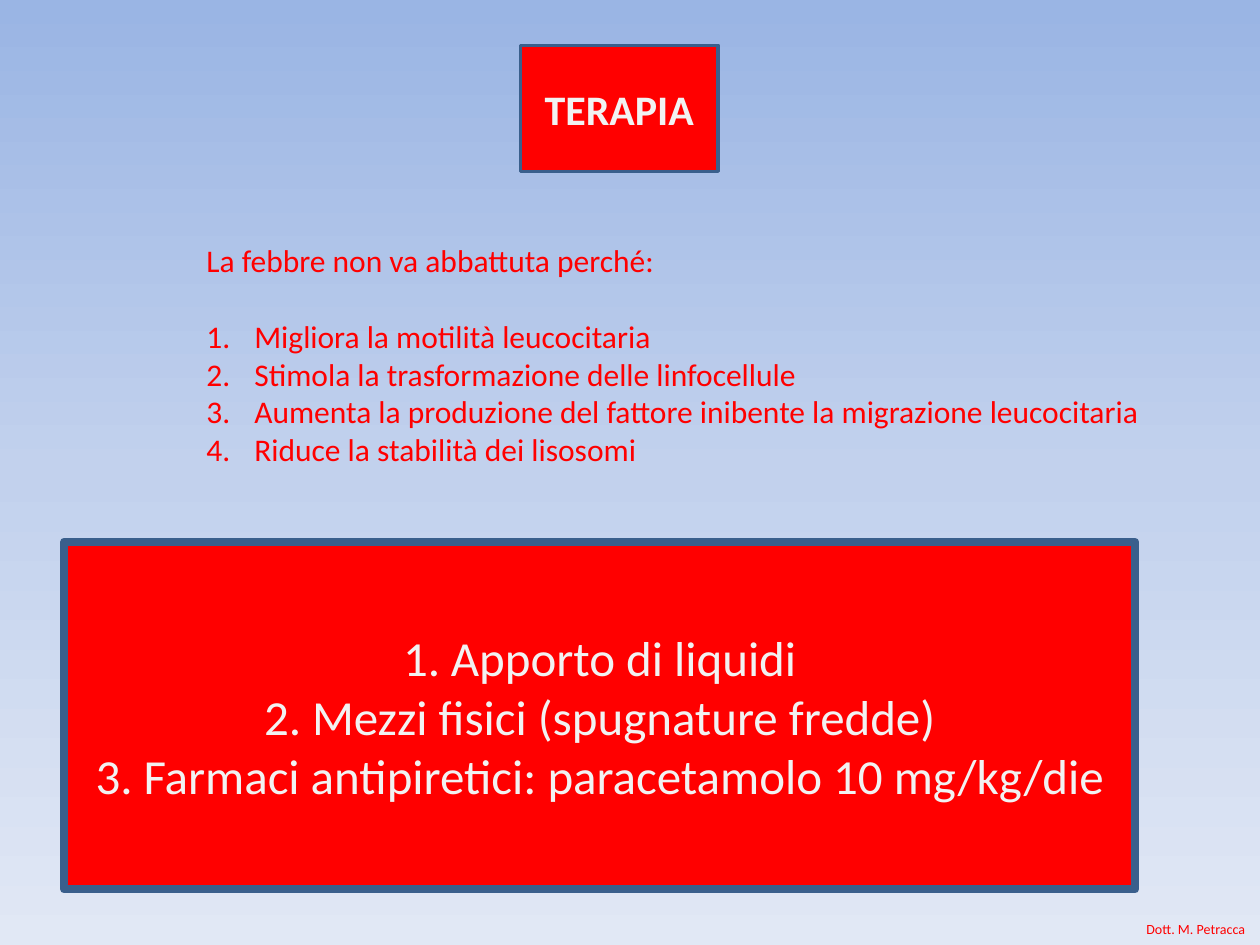
"""Build the TERAPIA slide on fever treatment."""
import copy
from dataclasses import dataclass

import pptx
import pptx.dml.color
import pptx.enum.shapes
import pptx.enum.text
import pptx.oxml.ns
import pptx.util
from lxml import etree
from pptx.util import Inches


@dataclass(frozen=True)
class Theme:
    font: str = "Calibri"
    red: str = "FF0000"
    pale: str = "F2F2F2"
    border: str = "3A5F8C"
    background: tuple = ("9AB5E4", "C2D1ED", "E1E8F5")
    title: int = 24
    treatment: int = 28
    body: int = 18
    credit: int = 8


theme = Theme()
rgb = pptx.dml.color.RGBColor.from_string
align = pptx.enum.text.PP_ALIGN
anchor = pptx.enum.text.MSO_ANCHOR
auto_size = pptx.enum.text.MSO_AUTO_SIZE


def add_text(tf, text, size, color, bold=False, alignment=align.LEFT, numbered=False, after=0):
    p = tf.paragraphs[0] if not tf.text else tf.add_paragraph()
    p.alignment = alignment
    p.space_after = pptx.util.Pt(after)
    r = p.add_run()
    r.text = text
    r.font.name = theme.font
    r.font.size = pptx.util.Pt(size)
    r.font.bold = bold
    r.font.color.rgb = rgb(color)
    if numbered:
        pPr = p._p.get_or_add_pPr()
        pPr.set("marL", str(Inches(0.38)))
        pPr.set("indent", str(Inches(-0.38)))
        bullet = etree.SubElement(pPr, pptx.oxml.ns.qn("a:buAutoNum"))
        bullet.set("type", "arabicPeriod")


def style_box(sp, line_width):
    sp.fill.solid()
    sp.fill.fore_color.rgb = rgb(theme.red)
    sp.line.color.rgb = rgb(theme.border)
    sp.line.width = pptx.util.Pt(line_width)
    sp.text_frame.word_wrap = True
    sp.text_frame.auto_size = auto_size.NONE
    sp.text_frame.vertical_anchor = anchor.MIDDLE


prs = pptx.Presentation()
prs.slide_width, prs.slide_height = Inches(10), Inches(7.5)
s = prs.slides.add_slide(prs.slide_layouts.get_by_name("Title Only"))

fill = s.background.fill
fill.gradient()
fill.gradient_angle = 270
stops = s.element.xpath(".//a:gsLst")[0]
stops.insert(1, copy.deepcopy(stops[0]))
for i, (stop, color) in enumerate(zip(fill.gradient_stops, theme.background)):
    stop.position = i / 2
    stop.color.rgb = rgb(color)

credit = s.shapes.add_textbox(Inches(9), Inches(7.26), Inches(1), Inches(0.24))
credit.text_frame.word_wrap = False
credit.text_frame.auto_size = auto_size.SHAPE_TO_FIT_TEXT
add_text(credit.text_frame, "Dott. M. Petracca", theme.credit, theme.red)

title = s.shapes.title
title.left, title.top = Inches(4.13), Inches(0.36)
title.width, title.height = Inches(1.57), Inches(1)
style_box(title, 2)
add_text(title.text_frame, "TERAPIA", theme.title, theme.pale, bold=True, alignment=align.CENTER)

reasons = s.shapes.add_textbox(Inches(1.54), Inches(1.86), Inches(7.69), Inches(1.92))
tf = reasons.text_frame
tf.word_wrap = False
tf.auto_size = auto_size.SHAPE_TO_FIT_TEXT
add_text(tf, "La febbre non va abbattuta perché:", theme.body, theme.red, after=22)
for text in (
    "Migliora la motilità leucocitaria",
    "Stimola la trasformazione delle linfocellule",
    "Aumenta la produzione del fattore inibente la migrazione leucocitaria",
    "Riduce la stabilità dei lisosomi",
):
    add_text(tf, text, theme.body, theme.red, numbered=True)

treatment = s.shapes.add_shape(
    pptx.enum.shapes.MSO_SHAPE.RECTANGLE, Inches(0.51), Inches(4.3), Inches(8.5), Inches(2.76)
)
treatment.shadow.inherit = False
style_box(treatment, 4.5)
for text in (
    "Apporto di liquidi",
    "Mezzi fisici (spugnature fredde)",
    "Farmaci antipiretici: paracetamolo 10 mg/kg/die",
):
    add_text(
        treatment.text_frame, text, theme.treatment, theme.pale,
        alignment=align.CENTER, numbered=True,
    )

prs.save("out.pptx")
